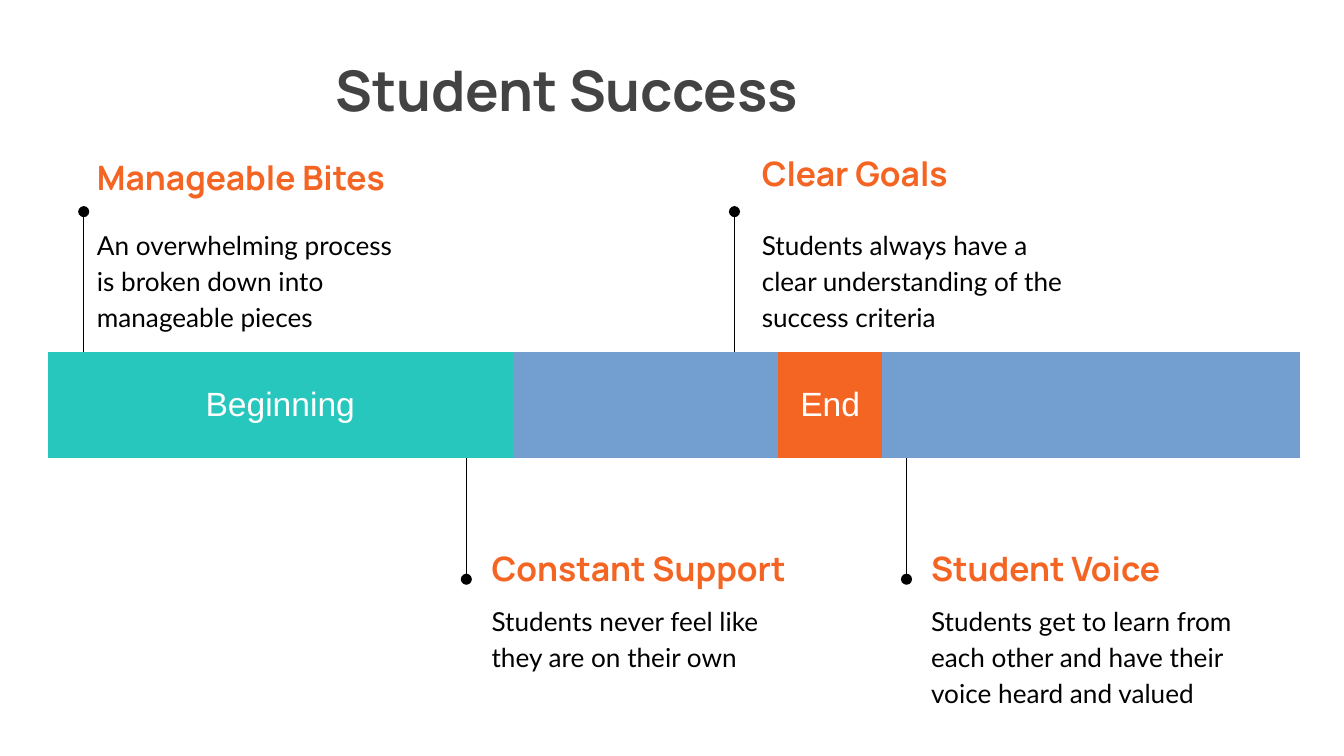
from dataclasses import dataclass
from typing import Any

from lxml.etree import SubElement
from pptx import Presentation
from pptx.dml.color import RGBColor as Rgb
from pptx.enum.shapes import MSO_CONNECTOR as Connector
from pptx.enum.text import MSO_ANCHOR as Anchor, PP_ALIGN as Align
from pptx.oxml.ns import qn
from pptx.util import Emu, Inches, Pt

COLUMNS, ROWS = 100, 56.25
CELL = Inches(0.1)
BAR_LEFT, BAR_TOP, BAR_BOTTOM = 3.55, 26.2, 34.1
BAR_COLUMNS = [7.77] * 3 + [11.3, 4.2] + [7.77] * 7


@dataclass(frozen=True)
class Format:
    font: str
    size: float
    color: str
    bold: bool = False
    spacing: float = 1.0


@dataclass(frozen=True)
class Theme:
    title: Format = Format("Manrope", 30, "434343", bold=True)
    heading: Format = Format("Manrope", 18, "F46524", bold=True)
    body: Format = Format("Lato", 14, "000000", spacing=1.15)
    stage: Format = Format("Arial", 18, "FFFFFF")
    line: str = "000000"
    line_width: float = 0.75
    teal: str = "27C7BD"
    orange: str = "F46524"


@dataclass(frozen=True)
class Area:
    left: float
    top: float
    width: float
    height: float

    def lengths(self) -> list[Emu]:
        return [grid(n) for n in (self.left, self.top, self.width, self.height)]


@dataclass(frozen=True)
class Stage:
    first: int
    last: int
    color: str
    label: str


@dataclass(frozen=True)
class Milestone:
    heading: str
    detail: str
    heading_area: Area
    detail_area: Area
    pin_column: float
    pin_start: float
    pin_end: float


THEME = Theme()
STAGES = [
    Stage(0, 3, THEME.teal, "Beginning"),
    Stage(4, 11, THEME.orange, "End"),
]
ABOVE = (BAR_TOP, 15.75)
BELOW = (BAR_BOTTOM, 43.1)
MILESTONES = [
    Milestone("Manageable Bites",
              "An overwhelming process is broken down into manageable pieces",
              Area(6.23, 10, 25.3, 6.3), Area(6.23, 15.7, 25.3, 9.1), 6.23, *ABOVE),
    Milestone("Constant Support",
              "Students never feel like they are on their own",
              Area(35.6, 40.15, 25.3, 4.3), Area(35.6, 43.7, 25.3, 6.3), 34.7, *BELOW),
    Milestone("Clear Goals",
              "Students always have a clear understanding of the success criteria",
              Area(55.7, 10.75, 25.7, 4.3), Area(55.7, 15.7, 25.7, 6.3), 54.65, *ABOVE),
    Milestone("Student Voice",
              "Students get to learn from each other and have their voice heard and valued",
              Area(68.3, 40.15, 25.7, 4.3), Area(68.3, 43.7, 25.7, 6.3), 67.45, *BELOW),
]


def grid(count: float) -> Emu:
    """Length of a number of grid columns or rows."""
    return Emu(round(count * CELL))


def set_all(target: Any, values: dict[str, Any]) -> None:
    for name, value in values.items():
        setattr(target, name, value)


def write(frame: Any, text: str, style: Format, align: Align = Align.LEFT) -> None:
    para = frame.paragraphs[0]
    set_all(para, {"alignment": align, "line_spacing": style.spacing})
    span = para.add_run()
    span.text = text
    set_all(span.font, {"name": style.font, "size": Pt(style.size), "bold": style.bold})
    span.font.color.rgb = Rgb.from_string(style.color)


def add_text(page: Any, area: Area, text: str, style: Format,
             anchor: Anchor = Anchor.TOP, indent: float = 1) -> None:
    frame = page.shapes.add_textbox(*area.lengths()).text_frame
    set_all(frame, {
        "word_wrap": True, "vertical_anchor": anchor, "margin_left": grid(indent),
        "margin_right": CELL, "margin_top": CELL, "margin_bottom": CELL,
    })
    write(frame, text, style)


def add_bar(page: Any) -> None:
    area = Area(BAR_LEFT, BAR_TOP, sum(BAR_COLUMNS), BAR_BOTTOM - BAR_TOP)
    table = page.shapes.add_table(1, len(BAR_COLUMNS), *area.lengths()).table
    set_all(table, {"first_row": False, "horz_banding": False})
    for column, width in zip(table.columns, BAR_COLUMNS):
        column.width = grid(width)
    # The plain style without borders keeps the stages flush.
    style = table._tbl.tblPr.find(qn("a:tableStyleId"))
    style.text = "{2D5ABB26-0587-4C30-8999-92F81FD0307C}"
    for stage in STAGES:
        cell = table.cell(0, stage.first)
        cell.merge(table.cell(0, stage.last))
        cell.fill.solid()
        cell.fill.fore_color.rgb = Rgb.from_string(stage.color)
        set_all(cell, {
            "vertical_anchor": Anchor.MIDDLE, "margin_left": CELL,
            "margin_right": CELL, "margin_top": CELL, "margin_bottom": CELL,
        })
        write(cell.text_frame, stage.label, THEME.stage, Align.CENTER)


def add_pin(page: Any, column: float, start: float, end: float) -> None:
    """Draw a line from the bar that ends in a dot."""
    pin = page.shapes.add_connector(
        Connector.STRAIGHT, grid(column), grid(start), grid(column), grid(end))
    pin.line.width = Pt(THEME.line_width)
    pin.line.color.rgb = Rgb.from_string(THEME.line)
    SubElement(pin.line._get_or_add_ln(), qn("a:tailEnd"),
               {"type": "oval", "w": "med", "len": "med"})
    SubElement(pin._element.spPr, qn("a:effectLst"))


def add_milestone(page: Any, item: Milestone) -> None:
    add_pin(page, item.pin_column, item.pin_start, item.pin_end)
    add_text(page, item.heading_area, item.heading, THEME.heading, Anchor.MIDDLE)
    add_text(page, item.detail_area, item.detail, THEME.body)


def main() -> None:
    deck = Presentation()
    set_all(deck, {"slide_width": grid(COLUMNS), "slide_height": grid(ROWS)})
    page = deck.slides.add_slide(deck.slide_layouts[6])
    add_text(page, Area(2.3, 3.15, 93.2, 7), "Student Success", THEME.title, indent=22.65)
    add_bar(page)
    for item in MILESTONES:
        add_milestone(page, item)
    deck.save("out.pptx")


if __name__ == "__main__":
    main()
